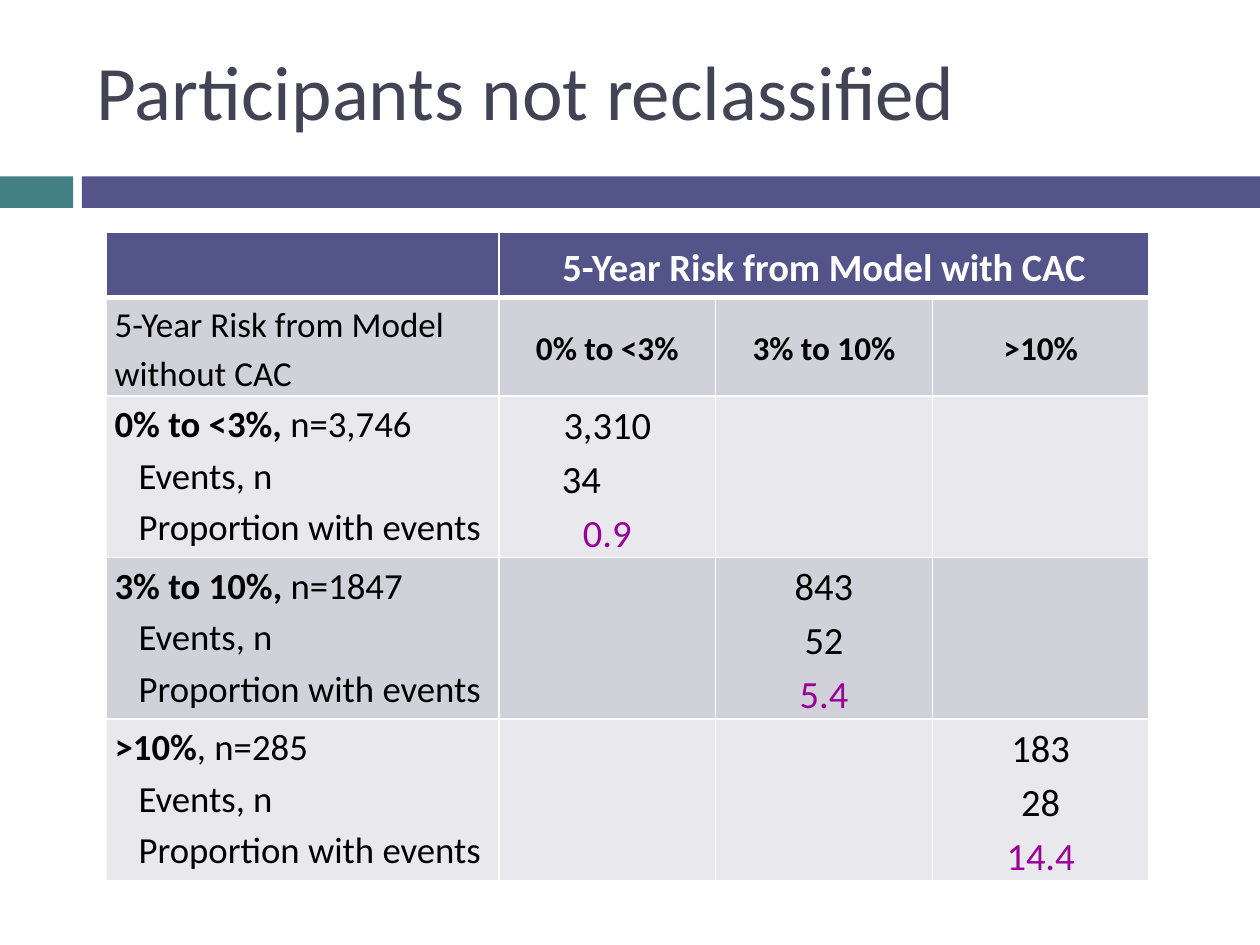
from lxml.etree import SubElement
from pptx import Presentation
from pptx.dml.color import RGBColor
from pptx.enum.shapes import MSO_SHAPE
from pptx.enum.text import MSO_ANCHOR, PP_ALIGN
from pptx.oxml.ns import qn
from pptx.util import Inches, Pt

W, H = 10, 7.5
FONT = "Calibri"
COLORS = {
    "title": "424456", "teal": "438086", "indigo": "53548A",
    "band_dark": "D1D1DA", "band_light": "E9E9ED",
    "white": "FFFFFF", "black": "000000", "purple": "990099",
}
COL_WIDTHS = [3.12, 1.72, 1.72, 1.72]
ROW_HEIGHTS = [0.52, 0.72, 1.27, 1.27, 1.27]
RISKS = ["0% to <3%", "3% to 10%", ">10%"]
# bold label, plain label, values on the diagonal
GROUPS = [
    ("0% to <3%, ", "n=3,746", ["3,310", "34", "0.9"]),
    ("3% to 10%, ", "n=1847", ["843", "52", "5.4"]),
    (">10%", ", n=285", ["183", "28", "14.4"]),
]
DETAILS = ["Events, n", "Proportion with events"]
DETAIL_INDENT = 0.19
VALUE_INDENTS = {"34": 0.43}  # set left of centre


def rgb(name):
    return RGBColor.from_string(COLORS[name])


def set_attrs(obj, formats):
    for name, value in formats.items():
        setattr(obj, name, value)


def write_paragraph(tf, runs, indent=0, **formats):
    """Fill the empty first paragraph or append one; runs are (text, size, bold, colour)."""
    p = tf.paragraphs[0]
    if p.runs:
        p = tf.add_paragraph()
    set_attrs(p, formats)
    if indent:
        p._p.get_or_add_pPr().set("marL", str(Inches(indent)))
    for text, size, bold, color in runs:
        r = p.add_run()
        r.text = text
        set_attrs(r.font, {"name": FONT, "size": Pt(size), "bold": bold})
        r.font.color.rgb = rgb(color)


def add_title(s, x, y, w, h):
    tf = s.shapes.add_textbox(*map(Inches, (x, y, w, h))).text_frame
    set_attrs(tf, {"word_wrap": True, "vertical_anchor": MSO_ANCHOR.MIDDLE})
    write_paragraph(tf, [("Participants not reclassified", 44, False, "title")])


def add_divider(s, x, y, w, h):
    accent, gap = 0.058 * w, 0.007 * w
    bar_left = accent + gap
    for left, width, color in [(x, accent, "teal"),
                               (x + bar_left, w - bar_left, "indigo")]:
        sp = s.shapes.add_shape(MSO_SHAPE.RECTANGLE,
                                *map(Inches, (left, y, width, h)))
        sp.shadow.inherit = False
        sp.fill.solid()
        sp.fill.fore_color.rgb = rgb(color)
        sp.line.fill.background()


def style_cell(cell, fill, anchor, bottom=1, top=1):
    """Set margins, anchor, white borders (widths in points) and fill."""
    set_attrs(cell, {"margin_left": Inches(0.07), "margin_right": Inches(0.07),
                     "margin_top": 0, "margin_bottom": 0,
                     "vertical_anchor": anchor})
    tcPr = cell._tc.get_or_add_tcPr()
    for side, width in {"L": 1, "R": 1, "T": top, "B": bottom}.items():
        ln = SubElement(tcPr, qn(f"a:ln{side}"), w=str(Pt(width)))
        SubElement(SubElement(ln, qn("a:solidFill")), qn("a:srgbClr"),
                   val=COLORS["white"])
    cell.fill.solid()
    cell.fill.fore_color.rgb = rgb(fill)


def fill_headers(table):
    spacing = {"line_spacing": 1.15, "space_before": Pt(6)}
    centred = {"alignment": PP_ALIGN.CENTER, **spacing}
    table.cell(0, 1).merge(table.cell(0, 3))
    write_paragraph(table.cell(0, 1).text_frame,
                    [("5-Year Risk from Model with CAC", 22, True, "white")], **centred)
    write_paragraph(table.cell(1, 0).text_frame,
                    [("5-Year Risk from Model without CAC", 20, False, "black")], **spacing)
    for col, risk in enumerate(RISKS, 1):
        write_paragraph(table.cell(1, col).text_frame,
                        [(risk, 19, True, "black")], **centred)


def fill_group(table, index, bold_label, plain_label, values):
    row = index + 2
    tf = table.cell(row, 0).text_frame
    write_paragraph(tf, [(bold_label, 21, True, "black"),
                         (plain_label, 21, False, "black")], line_spacing=1.15)
    for detail in DETAILS:
        write_paragraph(tf, [(detail, 21, False, "black")],
                        indent=DETAIL_INDENT, line_spacing=1.15)
    tf = table.cell(row, index + 1).text_frame
    for value, color in zip(values, ["black", "black", "purple"]):
        indent = VALUE_INDENTS.get(value, 0)
        write_paragraph(tf, [(value, 22, False, color)], indent=indent,
                        alignment=PP_ALIGN.LEFT if indent else PP_ALIGN.CENTER,
                        line_spacing=1.15)


def add_risk_table(s, x, y, w, h):
    table = s.shapes.add_table(len(ROW_HEIGHTS), len(COL_WIDTHS),
                               *map(Inches, (x, y, w, h))).table
    for column, width in zip(table.columns, COL_WIDTHS):
        column.width = Inches(w * width / sum(COL_WIDTHS))
    for i, (row, height) in enumerate(zip(table.rows, ROW_HEIGHTS)):
        row.height = Inches(h * height / sum(ROW_HEIGHTS))
        band = "band_dark" if i % 2 else "band_light"
        for cell in row.cells:
            style_cell(cell, band if i else "indigo",
                       MSO_ANCHOR.MIDDLE if i < 2 else MSO_ANCHOR.TOP,
                       bottom=1 if i else 3, top=3 if i == 1 else 1)
    fill_headers(table)
    for i, group in enumerate(GROUPS):
        fill_group(table, i, *group)


def main():
    prs = Presentation()
    set_attrs(prs, {"slide_width": Inches(W), "slide_height": Inches(H)})
    s = prs.slides.add_slide(prs.slide_layouts[6])
    add_divider(s, 0, 1.4, W, 0.25)
    add_risk_table(s, 0.84, 1.84, sum(COL_WIDTHS), sum(ROW_HEIGHTS))
    add_title(s, 0.67, 0.17, 8.92, 1.08)
    prs.save("out.pptx")


if __name__ == "__main__":
    main()
